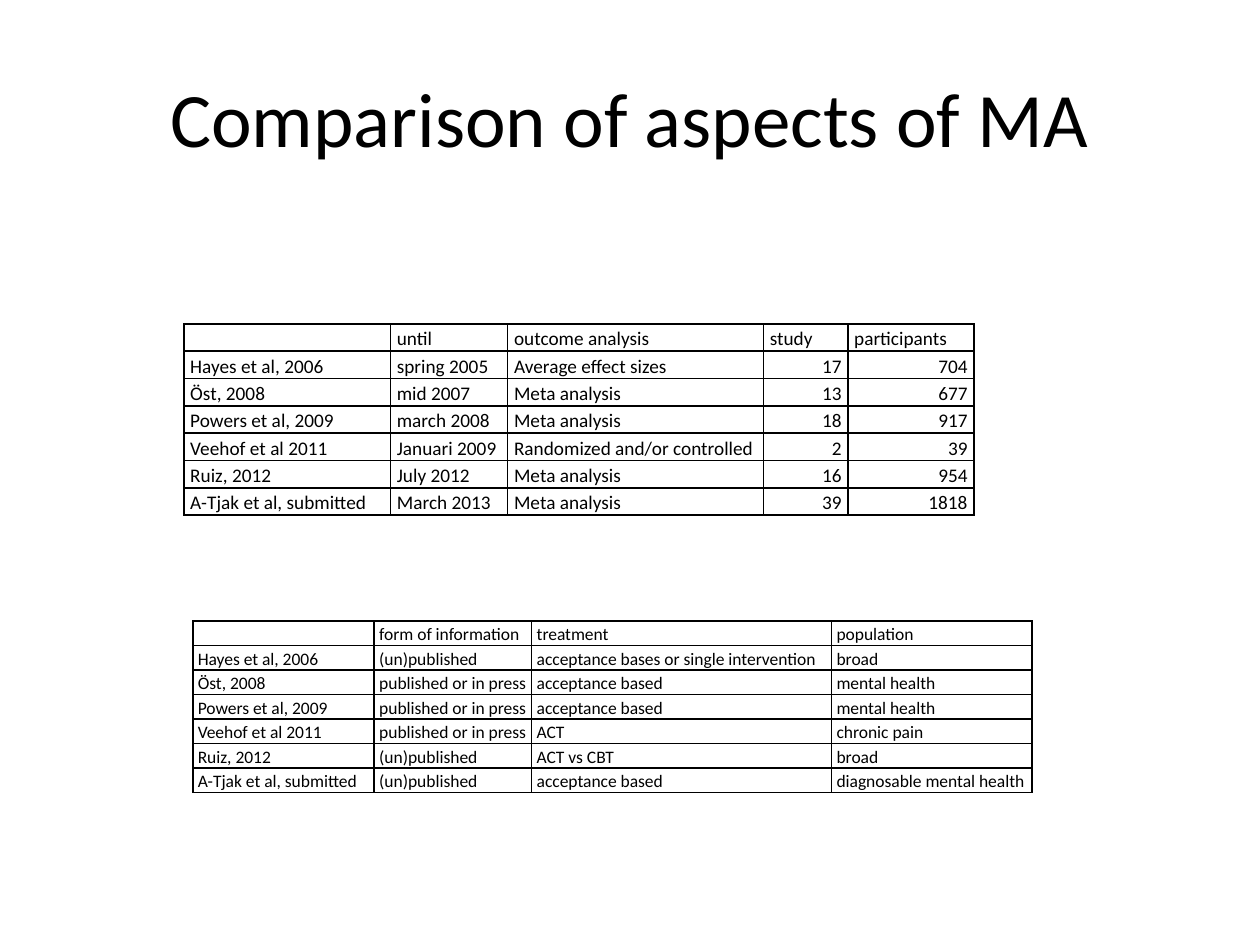
from dataclasses import dataclass

from lxml.etree import SubElement
from pptx import Presentation
from pptx.dml.color import RGBColor
from pptx.enum.text import MSO_ANCHOR, PP_ALIGN
from pptx.oxml.ns import qn
from pptx.util import Inches, Pt

COLORS = {"ink": "000000"}
FONT = "Calibri"
STUDIES = [
    "Hayes et al, 2006",
    "Öst, 2008",
    "Powers et al, 2009",
    "Veehof et al 2011",
    "Ruiz, 2012",
    "A-Tjak et al, submitted",
]


@dataclass
class StudyTable:
    left: float
    top: float
    column_widths: list[float]
    row_height: float
    font_size: int
    side_margin: float
    header: list[str]
    details: list[tuple[str, ...]]  # one entry per study

    def rows(self) -> list[list[str]]:
        return [["", *self.header]] + [
            [study, *detail] for study, detail in zip(STUDIES, self.details, strict=True)
        ]


TABLES = [
    StudyTable(
        1.46, 2.57, [1.64, 0.93, 2.03, 0.67, 1], 0.21, 11, 0.05,
        ["until", "outcome analysis", "study", "participants"],
        [
            ("spring 2005", "Average effect sizes", "17", "704"),
            ("mid 2007", "Meta analysis", "13", "677"),
            ("march 2008", "Meta analysis", "18", "917"),
            ("Januari 2009", "Randomized and/or controlled", "2", "39"),
            ("July 2012", "Meta analysis", "16", "954"),
            ("March 2013", "Meta analysis", "39", "1818"),
        ],
    ),
    StudyTable(
        1.53, 4.93, [1.44, 1.25, 2.38, 1.59], 0.18, 10, 0.04,
        ["form of information", "treatment", "population"],
        [
            ("(un)published", "acceptance bases or single intervention", "broad"),
            ("published or in press", "acceptance based", "mental health"),
            ("published or in press", "acceptance based", "mental health"),
            ("published or in press", "ACT", "chronic pain"),
            ("(un)published", "ACT vs CBT", "broad"),
            ("(un)published", "acceptance based", "diagnosable mental health"),
        ],
    ),
]


def set_font(paragraph, size: int) -> None:
    paragraph.font.name = FONT
    paragraph.font.size = Pt(size)
    paragraph.font.color.rgb = RGBColor.from_string(COLORS["ink"])


def add_borders(cell) -> None:
    properties = cell._tc.get_or_add_tcPr()
    for position, side in enumerate(("a:lnL", "a:lnR", "a:lnT", "a:lnB")):
        line = properties.makeelement(qn(side), {"w": str(Pt(1))})
        fill = SubElement(line, qn("a:solidFill"))
        SubElement(fill, qn("a:srgbClr"), val=COLORS["ink"])
        properties.insert(position, line)


def fill_cell(cell, text: str, style: StudyTable) -> None:
    cell.fill.background()
    add_borders(cell)
    cell.vertical_anchor = MSO_ANCHOR.BOTTOM
    cell.margin_left = cell.margin_right = Inches(style.side_margin)
    cell.margin_top = cell.margin_bottom = 0
    cell.text = text
    paragraph = cell.text_frame.paragraphs[0]
    paragraph.line_spacing = 1.15
    paragraph.alignment = PP_ALIGN.RIGHT if text.isdigit() else PP_ALIGN.LEFT
    set_font(paragraph, style.font_size)
    if not text:  # keeps the empty cell from stretching its row
        paragraph._p.get_or_add_endParaRPr().set("sz", str(style.font_size * 100))


def add_study_table(slide, content: StudyTable) -> None:
    rows = content.rows()
    table = slide.shapes.add_table(
        len(rows), len(content.column_widths),
        Inches(content.left), Inches(content.top),
        Inches(sum(content.column_widths)), Inches(content.row_height * len(rows)),
    ).table
    table.first_row = table.horz_banding = False
    for column, width in zip(table.columns, content.column_widths):
        column.width = Inches(width)
    for row, texts in zip(table.rows, rows):
        row.height = Inches(content.row_height)
        for cell, text in zip(row.cells, texts):
            fill_cell(cell, text, content)


def add_title(slide, text: str) -> None:
    title = slide.shapes.title
    title.left, title.top = Inches(0.5), Inches(0.3)
    title.width, title.height = Inches(9), Inches(1.25)
    title.text_frame.text = text
    title.text_frame.vertical_anchor = MSO_ANCHOR.MIDDLE
    paragraph = title.text_frame.paragraphs[0]
    paragraph.alignment = PP_ALIGN.CENTER
    set_font(paragraph, 44)


def main() -> None:
    presentation = Presentation()
    presentation.slide_width, presentation.slide_height = Inches(10), Inches(7.5)
    slide = presentation.slides.add_slide(presentation.slide_layouts[5])
    add_title(slide, "Comparison of aspects of MA")
    for content in TABLES:
        add_study_table(slide, content)
    presentation.save("out.pptx")


if __name__ == "__main__":
    main()
